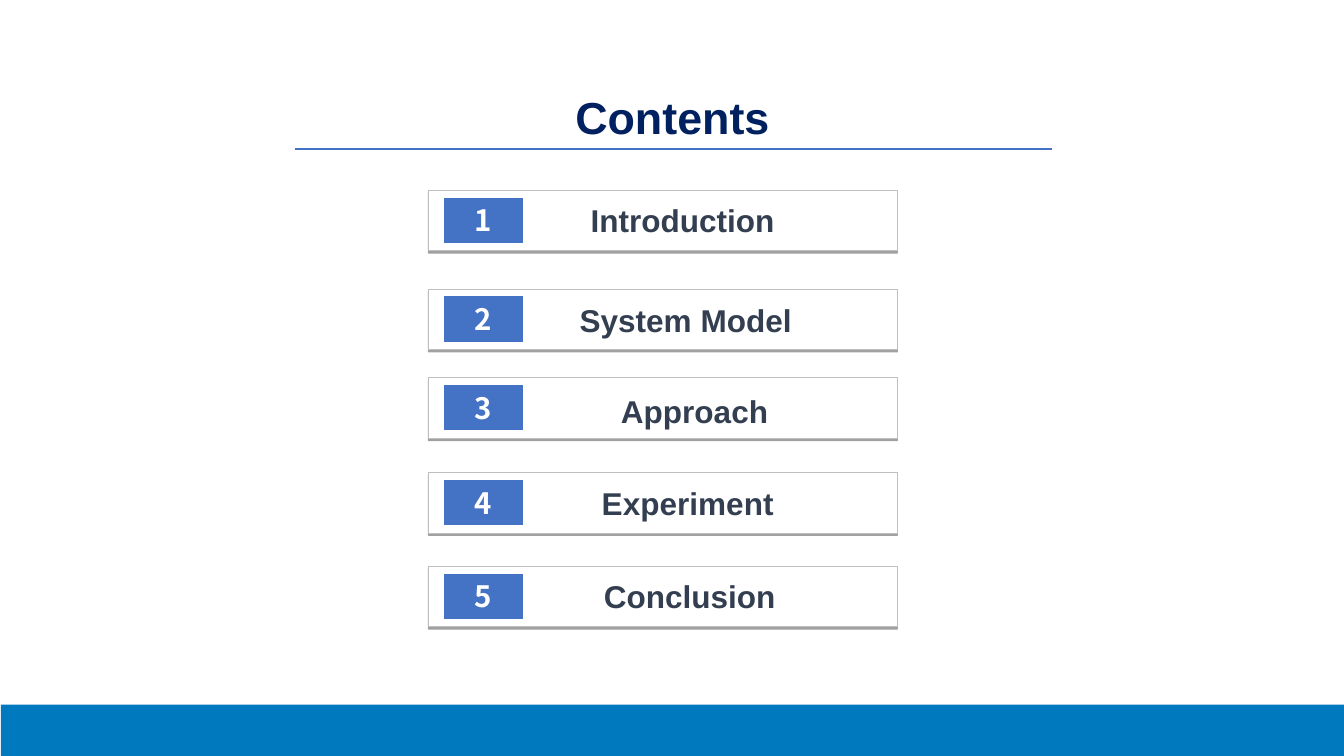
from lxml import etree
from pptx import Presentation
from pptx.dml.color import RGBColor
from pptx.enum.shapes import MSO_CONNECTOR as Connector, MSO_SHAPE as Shape
from pptx.enum.text import MSO_ANCHOR as Anchor, MSO_AUTO_SIZE as AutoSize, PP_ALIGN as Align
from pptx.oxml.ns import qn
from pptx.util import Inches, Pt

COLORS = {
    "navy": "002060", "slate": "333F50", "blue": "4472C4", "footer": "0079BF",
    "white": "FFFFFF", "border": "BFBFBF", "shadow": "000000",
}
LATIN, CJK = "Arial", "Noto Sans CJK SC"

# Row top, label text, label left, label top, label width
ROWS = [
    (1.89, "Introduction", 5.76, 1.94, 2.2),
    (2.87, "System Model", 5.65, 2.93, 2.55),
    (3.75, "Approach", 6.06, 3.84, 1.74),
    (4.69, "Experiment", 5.87, 4.75, 2.24),
    (5.62, "Conclusion", 5.89, 5.67, 1.93),
]


def rgb(name):
    return RGBColor.from_string(COLORS[name])


def shadow_effect(blur, dist, angle, alpha):
    """Build an outer shadow; blur and dist in points, alpha in percent."""
    effects = etree.Element(qn("a:effectLst"))
    outer = etree.SubElement(effects, qn("a:outerShdw"), blurRad=str(Pt(blur)),
                             dist=str(Pt(dist)), dir=str(angle * 60000),
                             algn="ctr", rotWithShape="0")
    color = etree.SubElement(outer, qn("a:srgbClr"), val=COLORS["shadow"])
    etree.SubElement(color, qn("a:alpha"), val=str(alpha * 1000))
    return effects


class Deck:
    def __init__(self):
        self.prs = Presentation()
        self.prs.slide_width, self.prs.slide_height = Inches(13.33), Inches(7.5)
        self.slide = self.prs.slides.add_slide(self.prs.slide_layouts[5])

    def text(self, sp, text, size, color, font, align, anchor, wrap=True):
        tf = sp.text_frame
        tf.auto_size = AutoSize.NONE
        tf.word_wrap, tf.vertical_anchor = wrap, anchor
        p = tf.paragraphs[0]
        p.alignment = align
        r = p.add_run()
        r.text = text
        r.font.size, r.font.bold, r.font.name = Pt(size), True, font
        r.font.color.rgb = rgb(color)
        etree.SubElement(r.font._element, qn("a:ea"), typeface=font)
        return r

    def title(self, text, x, y, w, h):
        sp = self.slide.shapes.title
        sp.left, sp.top, sp.width, sp.height = map(Inches, (x, y, w, h))
        r = self.text(sp, text, 32, "navy", LATIN, Align.CENTER, Anchor.TOP)
        fill = r.font._element.find(qn("a:solidFill"))
        fill.addnext(shadow_effect(3, 3, 45, 43))

    def rect(self, shapes, x, y, w, h, fill, line=None, width=0.75):
        sp = shapes.add_shape(Shape.RECTANGLE, *map(Inches, (x, y, w, h)))
        sp.shadow.inherit = False
        sp.fill.solid()
        sp.fill.fore_color.rgb = rgb(fill)
        if line:
            sp.line.color.rgb, sp.line.width = rgb(line), Pt(width)
        else:
            sp.line.fill.background()
        return sp

    def rule(self, x1, x2, y):
        line = self.slide.shapes.add_connector(
            Connector.STRAIGHT, *map(Inches, (x1, y, x2, y)))
        line.line.color.rgb, line.line.width = rgb("blue"), Pt(1)
        etree.SubElement(line._element.spPr, qn("a:effectLst"))

    def row(self, number, top, text, label_x, label_y, label_w):
        shapes = self.slide.shapes.add_group_shape().shapes
        # Card with a shadow along its lower edge
        card = self.rect(shapes, 4.25, top, 4.65, 0.6, "white", "border")
        props = card._element.spPr
        props.replace(props.find(qn("a:effectLst")), shadow_effect(0, 1.6, 90, 37))
        # Number badge
        badge = self.rect(shapes, 4.39, top + 0.06, 0.81, 0.47, "blue", "white", 1.5)
        self.text(badge, str(number), 21, "white", CJK, Align.CENTER, Anchor.MIDDLE, False)
        # Label
        label = shapes.add_textbox(*map(Inches, (label_x, label_y, label_w, 0.48)))
        self.text(label, text, 22.5, "slate", LATIN, Align.JUSTIFY, Anchor.MIDDLE)


def main():
    deck = Deck()
    # Footer band
    deck.rect(deck.slide.shapes, 0.01, 6.99, 13.32, 0.68, "footer")
    # Heading
    deck.title("Contents", 3.32, 0.84, 6.7, 0.64)
    deck.rule(2.93, 10.43, 1.48)
    # Agenda rows
    for number, row in enumerate(ROWS, 1):
        deck.row(number, *row)
    deck.prs.save("out.pptx")


if __name__ == "__main__":
    main()
